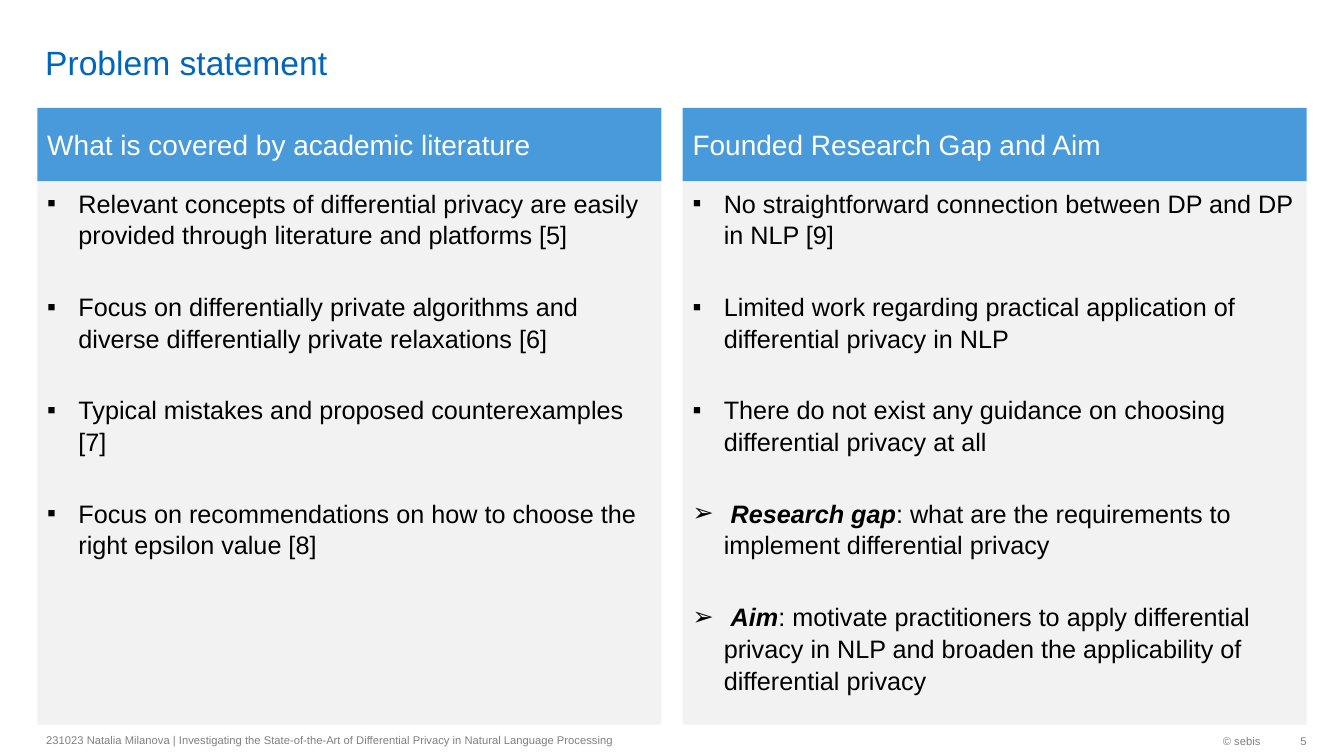
from pptx import Presentation
from pptx import util as u
from pptx.dml.color import RGBColor
from pptx.enum import shapes, text
from pptx.oxml.ns import qn
from lxml import etree

BLUE, HEADER, PANEL, GREY = "0065BD", "489ADA", "F2F2F2", "808080"
TITLE = "Problem statement"
COLUMNS = [
    ("What is covered by academic literature", [
        ("▪", "", "Relevant concepts of differential privacy are easily provided through literature and platforms [5]"),
        ("▪", "", "Focus on differentially private algorithms and diverse differentially private relaxations [6]"),
        ("▪", "", "Typical mistakes and proposed counterexamples [7]"),
        ("▪", "", "Focus on recommendations on how to choose the right epsilon value [8]"),
    ]),
    ("Founded Research Gap and Aim", [
        ("▪", "", "No straightforward connection between DP and DP in NLP [9]"),
        ("▪", "", "Limited work regarding practical application of differential privacy in NLP"),
        ("▪", "", "There do not exist any guidance on choosing differential privacy at all"),
        ("➢", "Research gap", ": what are the requirements to implement differential privacy"),
        ("➢", "Aim", ": motivate practitioners to apply differential privacy in NLP and broaden "
                     "the applicability of differential privacy"),
    ]),
]
FOOTERS = [
    ("231023 Natalia Milanova | Investigating the State-of-the-Art of Differential Privacy "
     "in Natural Language Processing", (0.36, 7.18, 6.3, 0.32), text.PP_ALIGN.LEFT, 0.1),
    ("© sebis", (10.26, 7.19, 2.34, 0.32), text.PP_ALIGN.RIGHT, 0.1),
    ("5", (12.6, 7.19, 0.36, 0.32), text.PP_ALIGN.RIGHT, 0),
]
LEFT, COLUMN_WIDTH, COLUMN_STEP = 0.37, 6.19, 6.4
HEADER_TOP, HEADER_HEIGHT, PANEL_TOP, PANEL_HEIGHT = 1.07, 0.73, 1.8, 5.39


def colour(value):
    return RGBColor.from_string(value)


def add_run(paragraph, words, size, ink, strong=False):
    run = paragraph.add_run()
    run.text = words
    font = run.font
    font.name, font.size = "Arial", u.Pt(size)
    font.color.rgb = colour(ink)
    if strong:
        font.bold = font.italic = True


def add_panel(slide, box, fill, anchor):
    panel = slide.shapes.add_shape(shapes.MSO_SHAPE.RECTANGLE, *map(u.Inches, box))
    panel.shadow.inherit = False
    panel.fill.solid()
    panel.fill.fore_color.rgb = colour(fill)
    panel.line.fill.background()
    frame = panel.text_frame
    frame.word_wrap, frame.vertical_anchor = True, anchor
    frame.paragraphs[0].alignment = text.PP_ALIGN.LEFT
    return frame


def add_label(slide, words, box, size, ink, anchor, align=text.PP_ALIGN.LEFT, right=0.1, margin=0.05):
    frame = slide.shapes.add_textbox(*map(u.Inches, box)).text_frame
    frame.word_wrap, frame.vertical_anchor = True, anchor
    frame.margin_right = u.Inches(right)
    frame.margin_top = frame.margin_bottom = u.Inches(margin)
    frame.paragraphs[0].alignment = align
    add_run(frame.paragraphs[0], words, size, ink)


def add_points(frame, points):
    for index, (bullet, lead, words) in enumerate(points):
        point = frame.add_paragraph() if index else frame.paragraphs[0]
        properties = point._p.get_or_add_pPr()
        properties.set("marL", str(u.Inches(0.31)))
        properties.set("indent", str(u.Inches(-0.31)))
        etree.SubElement(properties, qn("a:buFont"), typeface="Arial")
        etree.SubElement(properties, qn("a:buChar"), char=bullet)
        point.alignment = text.PP_ALIGN.LEFT
        point.line_spacing = 1.05
        if index:
            point.space_before = u.Pt(28.5)
        if lead:
            add_run(point, " ", 18, "000000")
            add_run(point, lead, 18, "000000", strong=True)
        add_run(point, words, 18, "000000")


def main():
    deck = Presentation()
    deck.slide_width, deck.slide_height = u.Inches(13.33), u.Inches(7.5)
    slide = deck.slides.add_slide(deck.slide_layouts[6])

    for index, (heading, points) in enumerate(COLUMNS):
        left = LEFT + index * COLUMN_STEP
        header = add_panel(slide, (left, HEADER_TOP, COLUMN_WIDTH, HEADER_HEIGHT), HEADER, text.MSO_ANCHOR.MIDDLE)
        add_run(header.paragraphs[0], heading, 20, "FFFFFF")
        body = add_panel(slide, (left, PANEL_TOP, COLUMN_WIDTH, PANEL_HEIGHT), PANEL, text.MSO_ANCHOR.TOP)
        add_points(body, points)

    add_label(slide, TITLE, (0.35, 0.03, 11.58, 0.79), 24, BLUE, text.MSO_ANCHOR.BOTTOM, margin=0)
    for words, box, align, right in FOOTERS:
        add_label(slide, words, box, 8, GREY, text.MSO_ANCHOR.MIDDLE, align, right)

    deck.save("out.pptx")


if __name__ == "__main__":
    main()
